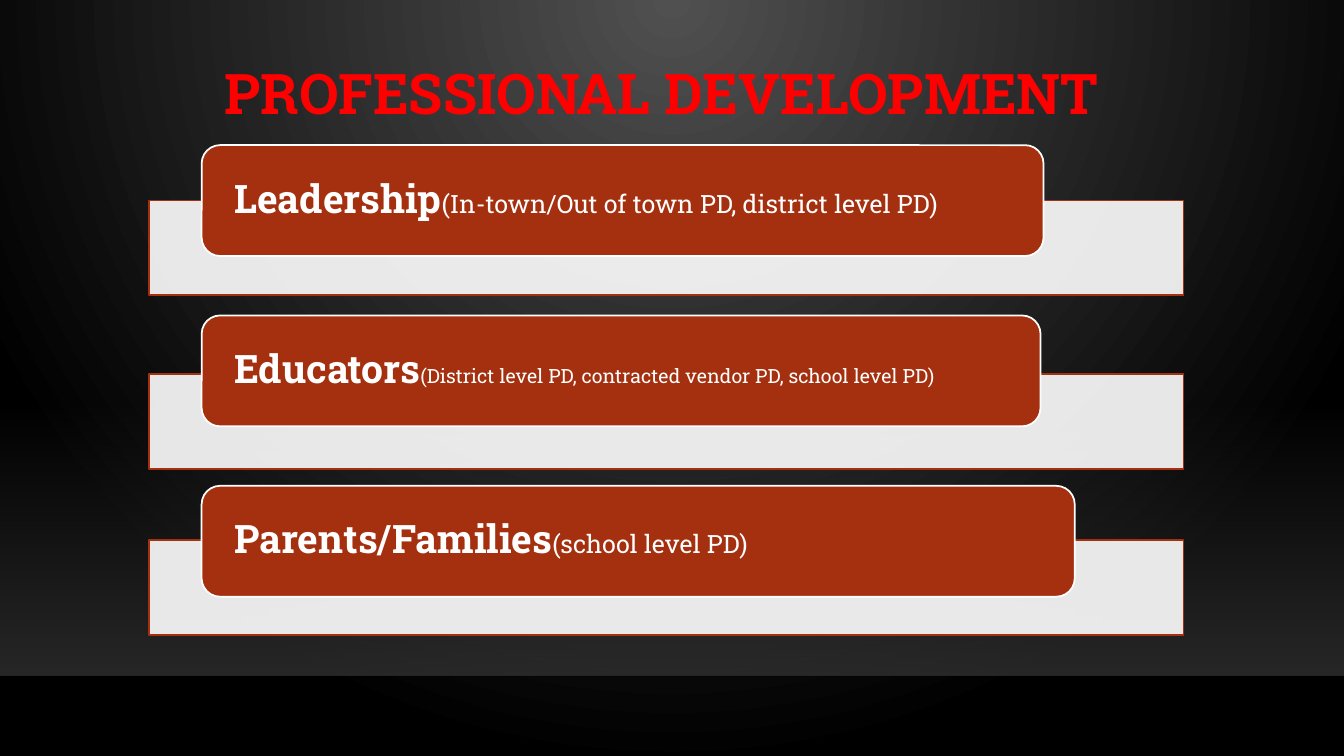
from lxml.etree import SubElement
from pptx import Presentation
from pptx.dml.color import RGBColor
from pptx.enum.shapes import MSO_CONNECTOR, MSO_SHAPE
from pptx.enum.text import MSO_ANCHOR, MSO_AUTO_SIZE, PP_ALIGN
from pptx.oxml.ns import qn
from pptx.util import Inches, Pt


def color(code):
    return RGBColor.from_string(code)


def write(para, text, size=28, ink="FFFFFF", bold=False, face="Roboto Slab"):
    run = para.add_run()
    run.text = text
    font = run.font
    font.name, font.size, font.bold = face, Pt(size), bold
    font.color.rgb = color(ink)


def fade(root, alpha):
    for node in root.xpath(".//a:srgbClr"):
        SubElement(node, qn("a:alpha"), val=str(alpha * 1000))


def blend(grad, stops):
    for child in list(grad):
        grad.remove(child)
    chain = SubElement(grad, qn("a:gsLst"))
    for place, code, alpha in stops:
        stop = SubElement(chain, qn("a:gs"), pos=str(place * 1000))
        tint = SubElement(stop, qn("a:srgbClr"), val=code)
        SubElement(tint, qn("a:alpha"), val=str(alpha * 1000))


class Deck:
    rust = "A5300F"
    white = "FFFFFF"

    def __init__(self):
        self.show = Presentation()
        self.show.slide_width = Inches(13.33)
        self.show.slide_height = Inches(7.5)
        self.slide = self.show.slides.add_slide(self.show.slide_layouts[5])

    def glow(self):
        self.slide.background.fill.gradient()
        grad = self.slide.element.xpath(".//p:bgPr/a:gradFill")[0]
        blend(grad, [(0, "505050", 100), (100, "000000", 100)])
        ring = SubElement(grad, qn("a:path"), path="circle")
        SubElement(ring, qn("a:fillToRect"), l="43000", t="0", r="43000", b="100000")

    def shape(self, kind, left, top, width, height):
        item = self.slide.shapes.add_shape(
            kind, Inches(left), Inches(top), Inches(width), Inches(height))
        item.shadow.inherit = False
        return item

    def floor(self, top, height):
        item = self.shape(MSO_SHAPE.RECTANGLE, 0, top, 13.33, height)
        item.line.fill.background()
        item.fill.gradient()
        grad = item.element.spPr.find(qn("a:gradFill"))
        blend(grad, [(0, "323232", 0), (100, "323232", 80)])
        SubElement(grad, qn("a:lin"), ang="5400000", scaled="0")

    def rule(self, top):
        line = self.slide.shapes.add_connector(
            MSO_CONNECTOR.STRAIGHT, 0, Inches(top), Inches(13.33), Inches(top))
        line.line.width = Pt(1)
        line.line.color.rgb = color("000001")
        fade(line.line._ln, 20)
        SubElement(line._element.spPr, qn("a:effectLst"))

    def frame(self, item, align, inset):
        frame = item.text_frame
        frame.word_wrap = True
        frame.auto_size = MSO_AUTO_SIZE.NONE
        frame.vertical_anchor = MSO_ANCHOR.MIDDLE
        frame.margin_left = frame.margin_right = Inches(inset)
        para = frame.paragraphs[0]
        para.alignment = align
        para.line_spacing = 0.9
        return para

    def title(self, text):
        item = self.slide.shapes.title
        item.left, item.top = Inches(1.48), Inches(0.38)
        item.width, item.height = Inches(10.16), Inches(1.15)
        para = self.frame(item, PP_ALIGN.CENTER, 0.1)
        write(para, text, size=40, ink="FF0000", bold=True)

    def paint(self, item, fill, edge):
        item.fill.solid()
        item.fill.fore_color.rgb = color(fill)
        item.line.color.rgb = color(edge)
        item.line.width = Pt(1.25)

    def bar(self, top):
        item = self.shape(MSO_SHAPE.RECTANGLE, 1.48, top, 10.26, 0.94)
        self.paint(item, self.white, self.rust)
        fade(item.element.spPr.find(qn("a:solidFill")), 90)

    def label(self, top, width, head, note, size):
        item = self.shape(MSO_SHAPE.ROUNDED_RECTANGLE, 2, top, width, 1.1)
        self.paint(item, self.rust, self.white)
        para = self.frame(item, PP_ALIGN.LEFT, 0.27)
        item.text_frame.margin_top = item.text_frame.margin_bottom = 0
        write(para, head, bold=True)
        write(para, note, size=size)


def main():
    deck = Deck()
    deck.glow()
    deck.floor(3.96, 2.74)
    deck.rule(6.71)
    deck.title("PROFESSIONAL DEVELOPMENT")
    groups = [
        (1.99, 8.35, "Leadership", "(In-town/Out of town PD, district level PD)", 18),
        (3.71, 8.32, "Educators",
         "(District level PD, contracted vendor PD, school level PD)", 14),
        (5.36, 8.66, "Parents/Families", "(school level PD)", 18),
    ]
    for row, (base, width, head, note, size) in enumerate(groups):
        deck.bar(base)
        deck.label(1.44 + 1.69 * row, width, head, note, size)
    deck.show.save("out.pptx")


if __name__ == "__main__":
    main()
